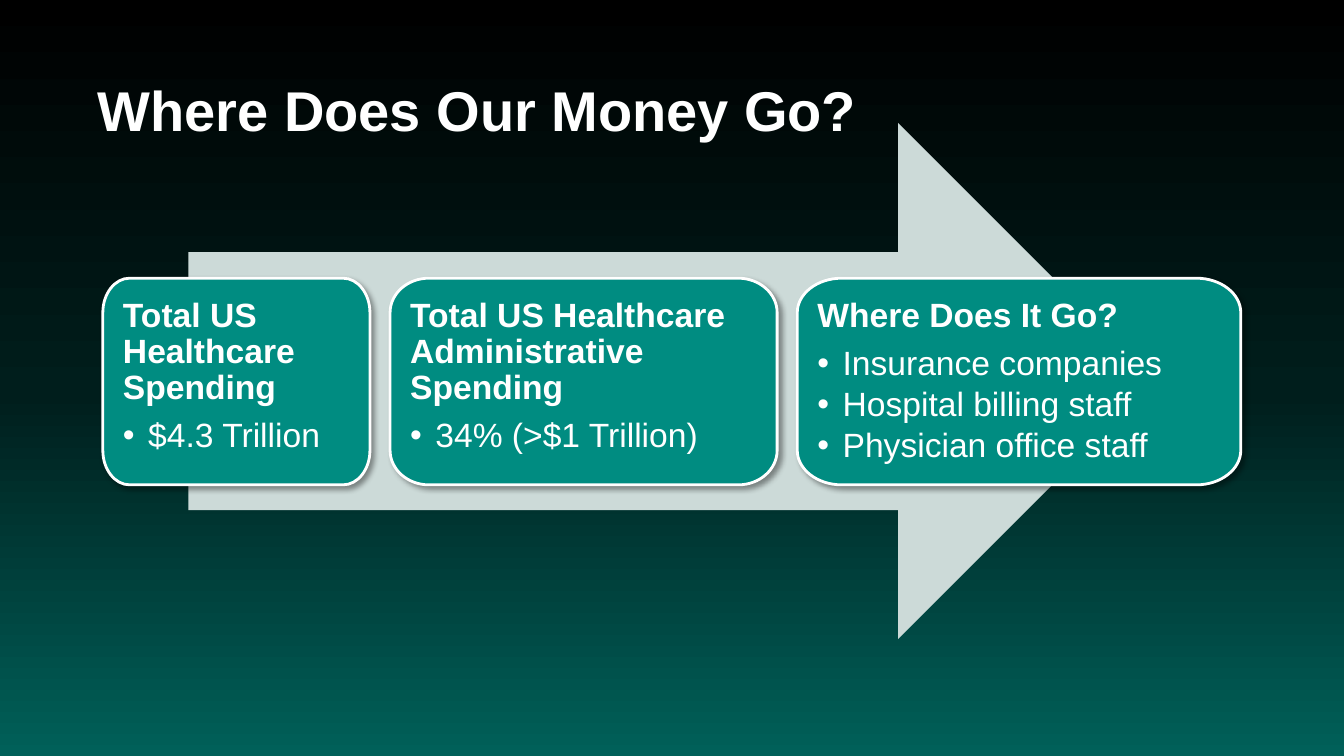
"""Build the healthcare spending slide with three cards over an arrow."""
from lxml.etree import SubElement
from pptx import Presentation
from pptx.dml.color import RGBColor
from pptx.enum.shapes import MSO_SHAPE as SHAPE
from pptx.enum.text import MSO_ANCHOR as ANCHOR, PP_ALIGN as ALIGN
from pptx.oxml.ns import qn
from pptx.util import Inches, Pt

TITLE = "Where Does Our Money Go?"
CARDS = [
    ("Total US Healthcare Spending", ["$4.3 Trillion"], 2.65),
    ("Total US Healthcare Administrative Spending", ["34% (>$1 Trillion)"], 3.84),
    ("Where Does It Go?",
     ["Insurance companies", "Hospital billing staff", "Physician office staff"], 4.4),
]
COLORS = {"arrow": "CCDAD8", "card": "008C81", "white": "FFFFFF", "shadow": "000000"}
BACKGROUND = [(0, "000000"), (52, "001E1C"), (100, "006059")]
FONT = "Arial"
LEFT, TOP, HEIGHT, GAP = 1.02, 2.76, 2.05, 0.2
CURVE = 0.55


def rgb(name):
    return RGBColor.from_string(COLORS[name])


def add(parent, tag, **attrs):
    return SubElement(parent, qn(tag), {k: str(v) for k, v in attrs.items()})


def set_background(s):
    fill = s.background.fill
    fill.gradient()
    fill.gradient_angle = 270
    stops = s.element.find(".//" + qn("a:gsLst"))
    for stop in list(stops):
        stops.remove(stop)
    for pos, color in BACKGROUND:
        add(add(stops, "a:gs", pos=pos * 1000), "a:srgbClr", val=color)


def set_margins(tf, size):
    tf.margin_left = tf.margin_top = tf.margin_right = tf.margin_bottom = Inches(size)
    tf.word_wrap = True


def style(p, size, bold, after=0):
    p.alignment = ALIGN.LEFT
    p.line_spacing = 0.9
    p.space_before, p.space_after = Pt(0), Pt(after)
    for r in p.runs:
        r.font.name, r.font.size, r.font.bold = FONT, Pt(size), bold
        r.font.color.rgb = rgb("white")


def round_corners(sp):
    """Turn every other straight segment into a quarter ellipse."""
    outline = sp.element.find(".//" + qn("a:path"))
    points = [(int(pt.get("x")), int(pt.get("y"))) for pt in outline.iter(qn("a:pt"))]
    lines = outline.findall(qn("a:lnTo"))
    for i in range(0, len(lines), 2):
        start, end = points[i], points[i + 1]
        corner = (start[0], end[1]) if i % 4 == 0 else (end[0], start[1])
        curve = add(outline, "a:cubicBezTo")
        for anchor in (start, end):
            x, y = (round(a + (c - a) * CURVE) for a, c in zip(anchor, corner))
            add(curve, "a:pt", x=x, y=y)
        add(curve, "a:pt", x=end[0], y=end[1])
        outline.replace(lines[i], curve)


def add_outline(s, x, y, w, h):
    rx, ry = w / 10, h / 6
    right, bottom = x + w, y + h
    corners = [(x, y + ry), (x + rx, y), (right - rx, y), (right, y + ry),
               (right, bottom - ry), (right - rx, bottom),
               (x + rx, bottom), (x, bottom - ry)]
    points = [(Inches(px), Inches(py)) for px, py in corners]
    builder = s.shapes.build_freeform(*points[0])
    builder.add_line_segments(points[1:], close=True)
    sp = builder.convert_to_shape()
    round_corners(sp)
    return sp


def add_shadow(sp):
    effects = add(sp.element.spPr, "a:effectLst")
    shadow = add(effects, "a:outerShdw", blurRad=Pt(4), dist=Pt(3),
                 dir=45 * 60000, algn="tl", rotWithShape=0)
    add(add(shadow, "a:srgbClr", val=COLORS["shadow"]), "a:alpha", val=40000)


def add_card(s, x, width, heading, items):
    sp = add_outline(s, x, TOP, width, HEIGHT)
    sp.fill.solid()
    sp.fill.fore_color.rgb = rgb("card")
    sp.line.color.rgb = rgb("white")
    sp.line.width = Pt(2)
    add_shadow(sp)
    tf = sp.text_frame
    set_margins(tf, 0.2)
    tf.vertical_anchor = ANCHOR.TOP
    tf.text = heading
    style(tf.paragraphs[0], 24, True, 8.4)
    for item in items:
        p = tf.add_paragraph()
        p.text = item
        p.level = 1
        pPr = p._p.get_or_add_pPr()
        pPr.set("marL", str(Inches(0.25)))
        pPr.set("indent", str(Inches(-0.25)))
        add(pPr, "a:buFont", typeface=FONT)
        add(pPr, "a:buChar", char="•")
        style(p, 24, False, 3.5)


def main():
    prs = Presentation()
    prs.slide_width, prs.slide_height = Inches(40 / 3), Inches(7.5)
    s = prs.slides.add_slide(prs.slide_layouts[5])
    set_background(s)

    arrow = s.shapes.add_shape(SHAPE.RIGHT_ARROW, Inches(1.87), Inches(1.22),
                               Inches(9.6), Inches(5.12))
    arrow.shadow.inherit = False
    arrow.fill.solid()
    arrow.fill.fore_color.rgb = rgb("arrow")
    arrow.line.fill.background()

    x = LEFT
    for heading, items, width in CARDS:
        add_card(s, x, width, heading, items)
        x += width + GAP

    title = s.shapes.title
    title.left, title.top = Inches(0.92), Inches(0.4)
    title.width, title.height = Inches(11.5), Inches(1.45)
    tf = title.text_frame
    set_margins(tf, 0.05)
    tf.vertical_anchor = ANCHOR.MIDDLE
    tf.text = TITLE
    style(tf.paragraphs[0], 40, True)

    prs.save("out.pptx")


if __name__ == "__main__":
    main()
